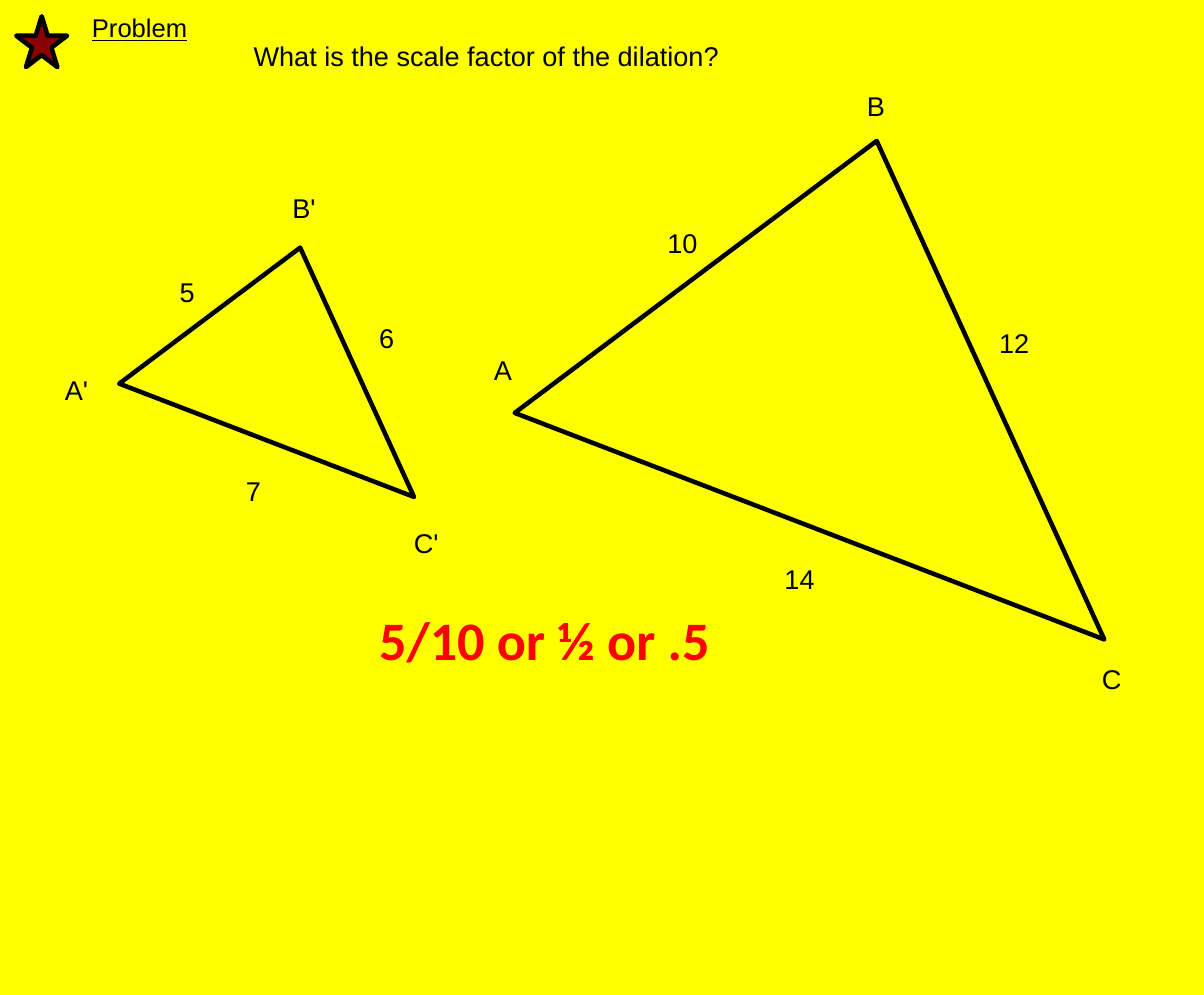
from pptx import Presentation
from pptx import util as u
from pptx.dml import color
from pptx.enum import shapes, text

COLORS = {"background": "FFFF00", "ink": "000000", "star": "8B0000", "answer": "FF0000"}
LABEL = {"name": "Arial", "size": u.Pt(18), "bold": False}
HEADING = {"name": "Arial", "size": u.Pt(17), "underline": True}
ANSWER = {"name": "Calibri", "size": u.Pt(36), "bold": True}


def write_text(shape, words, box, font_format=LABEL, ink="ink"):
    shape.left, shape.top, shape.width, shape.height = map(u.Inches, box)
    frame = shape.text_frame
    frame.word_wrap = True
    frame.auto_size = text.MSO_AUTO_SIZE.NONE
    frame.vertical_anchor = text.MSO_ANCHOR.TOP
    paragraph = frame.paragraphs[0]
    paragraph.alignment = text.PP_ALIGN.LEFT
    run = paragraph.add_run()
    run.text = words
    for name, value in font_format.items():
        setattr(run.font, name, value)
    run.font.color.rgb = color.RGBColor.from_string(COLORS[ink])


def outline(shape):
    shape.shadow.inherit = False
    shape.line.color.rgb = color.RGBColor.from_string(COLORS["ink"])
    shape.line.width = u.Pt(3)


presentation = Presentation()
presentation.slide_width = u.Inches(11.11)
presentation.slide_height = u.Inches(9.18)
slide = presentation.slides.add_slide(presentation.slide_layouts.get_by_name("Title Only"))
slide.background.fill.solid()
slide.background.fill.fore_color.rgb = color.RGBColor.from_string(COLORS["background"])

# Question
write_text(slide.shapes.title, "What is the scale factor of the dilation?", (2.24, 0.31, 6.05, 0.4))

# Star
star = slide.shapes.add_shape(shapes.MSO_SHAPE.STAR_5_POINT, *map(u.Inches, (0.15, 0.15, 0.47, 0.47)))
star.fill.solid()
star.fill.fore_color.rgb = color.RGBColor.from_string(COLORS["star"])
outline(star)

# Triangle ABC and its half-size image, each drawn from vertex A
side_ab, side_ac = (3.34, -2.51), (5.44, 2.09)
for (left, top), scale in (((1.1, 3.54), 0.5), ((4.75, 3.81), 1)):
    corners = [(u.Inches(left + scale * x), u.Inches(top + scale * y)) for x, y in (side_ab, side_ac)]
    builder = slide.shapes.build_freeform(u.Inches(left), u.Inches(top))
    builder.add_line_segments(corners, close=True)
    triangle = builder.convert_to_shape()
    triangle.fill.background()
    outline(triangle)

# Vertex names and side lengths: text, left, top, width
labels = [
    ("A", 4.46, 3.21, 0.37), ("B", 7.9, 0.78, 0.37), ("C", 10.07, 6.06, 0.39),
    ("A'", 0.5, 3.4, 0.43), ("B'", 2.6, 1.72, 0.43), ("C'", 3.72, 4.81, 0.45),
    ("5", 1.56, 2.49, 0.33), ("6", 3.4, 2.92, 0.33), ("7", 2.17, 4.33, 0.33),
    ("10", 6.06, 2.04, 0.52), ("12", 9.12, 2.96, 0.52), ("14", 7.14, 5.14, 0.52),
]
for words, left, top, width in labels:
    write_text(slide.shapes.add_textbox(0, 0, 0, 0), words, (left, top, width, 0.4))

# Heading and answer
write_text(slide.shapes.add_textbox(0, 0, 0, 0), "Problem", (0.75, 0.06, 1.67, 0.39), HEADING)
write_text(slide.shapes.add_textbox(0, 0, 0, 0), "5/10 or ½ or .5", (3.4, 5.54, 3.74, 0.71), ANSWER, "answer")

presentation.save("out.pptx")
